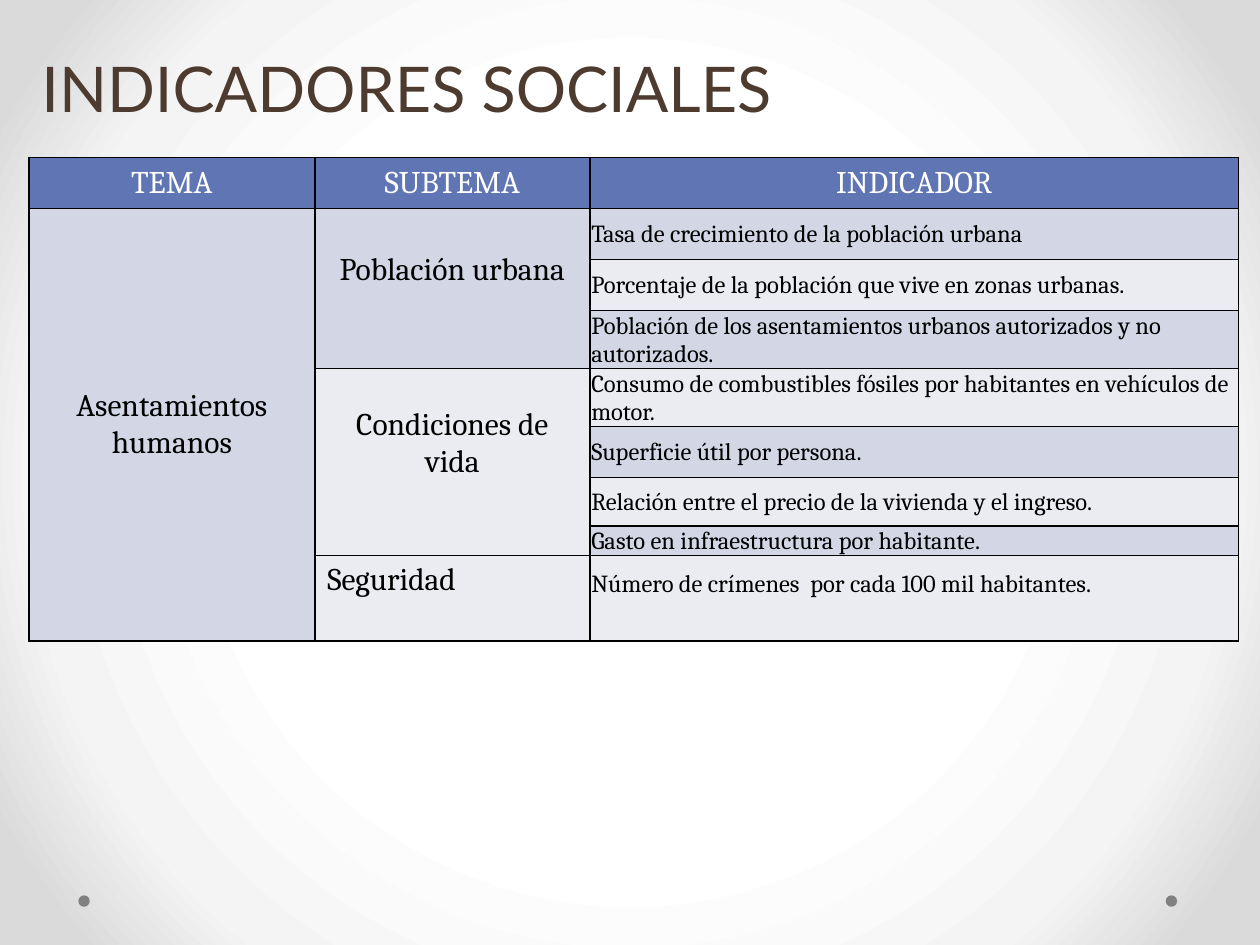
"""Builds the slide of social indicators for human settlements."""
from lxml.etree import SubElement
from pptx import Presentation
from pptx.dml.color import RGBColor
from pptx.enum.shapes import MSO_SHAPE
from pptx.enum.text import MSO_ANCHOR, PP_ALIGN
from pptx.oxml import parse_xml
from pptx.oxml.ns import nsdecls, qn
from pptx.util import Cm, Pt

THEME = {
    "title_font": "Lato", "table_font": "Cambria",
    "title_size": 36, "topic_size": 18, "indicator_size": 14,
    "title": "4E3B30", "header": "6076B4", "header_text": "FFFFFF",
    "odd": "D2D6E5", "even": "EAECF2", "text": "000000",
    "border": "000000", "dot": "808080",
    "glow": [(50, "FFFFFF"), (76, "F4F4F4"), (92, "DADADA")],
}
HEADINGS = ["TEMA", "SUBTEMA", "INDICADOR"]
TOPIC = "Asentamientos humanos"
SUBTOPICS = [
    ("Población urbana", [
        "Tasa de crecimiento de la población urbana",
        "Porcentaje de la población que vive en zonas urbanas.",
        "Población de los asentamientos urbanos autorizados y no autorizados.",
    ]),
    ("Condiciones de vida", [
        "Consumo de combustibles fósiles por habitantes en vehículos de motor.",
        "Superficie útil por persona.",
        "Relación entre el precio de la vivienda y el ingreso.",
        "Gasto en infraestructura por habitante.",
    ]),
    ("Seguridad", ["Número de crímenes  por cada 100 mil habitantes."]),
]
COLUMN_WIDTHS = [5.77, 5.54, 13.08]
ROW_HEIGHTS = [1.03, 1.03, 1.03, 1.17, 1.17, 1.03, 0.97, 0.6, 1.71]
TIGHT = 0.03


def add_text(frame, text, font, size, color, align=PP_ALIGN.LEFT):
    paragraph = frame.paragraphs[0]
    paragraph.alignment = align
    run = paragraph.add_run()
    run.text = text
    run.font.name = font
    run.font.size = Pt(size)
    run.font.bold = False
    run.font.color.rgb = RGBColor.from_string(color)


def fill_cell(cell, text, size, color, align, side=0.25, bottom=0.13):
    cell.vertical_anchor = MSO_ANCHOR.MIDDLE
    cell.margin_left = cell.margin_right = Cm(side)
    cell.margin_top = Cm(min(side, 0.13))
    cell.margin_bottom = Cm(bottom)
    add_text(cell.text_frame, text, THEME["table_font"], size, color, align)


presentation = Presentation()
presentation.slide_width, presentation.slide_height = Cm(25.4), Cm(19.05)
slide = presentation.slides.add_slide(presentation.slide_layouts[5])

stops = "".join(
    f'<a:gs pos="{position * 1000}"><a:srgbClr val="{color}"/></a:gs>'
    for position, color in THEME["glow"]
)
background = parse_xml(
    f'<p:bg {nsdecls("p", "a")}><p:bgPr><a:gradFill rotWithShape="1">'
    f'<a:gsLst>{stops}</a:gsLst><a:path path="circle">'
    '<a:fillToRect l="50000" t="50000" r="50000" b="50000"/></a:path>'
    '</a:gradFill><a:effectLst/></p:bgPr></p:bg>'
)
slide.element.cSld.insert(0, background)

for dot_left in (1.58, 23.5):
    dot = slide.shapes.add_shape(MSO_SHAPE.OVAL, Cm(dot_left), Cm(18.05), Cm(0.23), Cm(0.23))
    dot.shadow.inherit = False
    dot.fill.solid()
    dot.fill.fore_color.rgb = RGBColor.from_string(THEME["dot"])
    dot.line.fill.background()

title = slide.shapes.title
title.left, title.top, title.width, title.height = Cm(0.58), Cm(0.58), Cm(24.13), Cm(2.34)
title.text_frame.vertical_anchor = MSO_ANCHOR.MIDDLE
add_text(title.text_frame, "INDICADORES SOCIALES", THEME["title_font"],
         THEME["title_size"], THEME["title"])

table = slide.shapes.add_table(
    len(ROW_HEIGHTS), len(COLUMN_WIDTHS), Cm(0.58), Cm(3.17),
    Cm(sum(COLUMN_WIDTHS)), Cm(sum(ROW_HEIGHTS)),
).table
for column, width in zip(table.columns, COLUMN_WIDTHS):
    column.width = Cm(width)

for row_index, height in enumerate(ROW_HEIGHTS):
    table.rows[row_index].height = Cm(height)
    band = "header" if row_index == 0 else "odd" if row_index % 2 else "even"
    for column_index in range(len(COLUMN_WIDTHS)):
        cell = table.cell(row_index, column_index)
        properties = cell._tc.get_or_add_tcPr()
        for edge in ("a:lnL", "a:lnR", "a:lnT", "a:lnB"):
            border = SubElement(properties, qn(edge), w=str(Pt(1)))
            border_fill = SubElement(border, qn("a:solidFill"))
            SubElement(border_fill, qn("a:srgbClr"), val=THEME["border"])
        cell.fill.solid()
        fill_name = "odd" if row_index and column_index == 0 else band
        cell.fill.fore_color.rgb = RGBColor.from_string(THEME[fill_name])

for column_index, heading in enumerate(HEADINGS):
    fill_cell(table.cell(0, column_index), heading, THEME["topic_size"],
              THEME["header_text"], PP_ALIGN.CENTER, TIGHT, 0)

table.cell(1, 0).merge(table.cell(len(ROW_HEIGHTS) - 1, 0))
fill_cell(table.cell(1, 0), TOPIC, THEME["topic_size"], THEME["text"], PP_ALIGN.CENTER)

first_row = 1
for subtopic, indicators in SUBTOPICS:
    single = len(indicators) == 1
    subtopic_cell = table.cell(first_row, 1)
    if not single:
        subtopic_cell.merge(table.cell(first_row + len(indicators) - 1, 1))
    fill_cell(subtopic_cell, subtopic, THEME["topic_size"], THEME["text"],
              PP_ALIGN.LEFT if single else PP_ALIGN.CENTER, bottom=0.86)
    for row_index, indicator in enumerate(indicators, first_row):
        fill_cell(table.cell(row_index, 2), indicator, THEME["indicator_size"], THEME["text"],
                  PP_ALIGN.LEFT, TIGHT, 0.58 if single else 0)
    first_row += len(indicators)

presentation.save("out.pptx")
